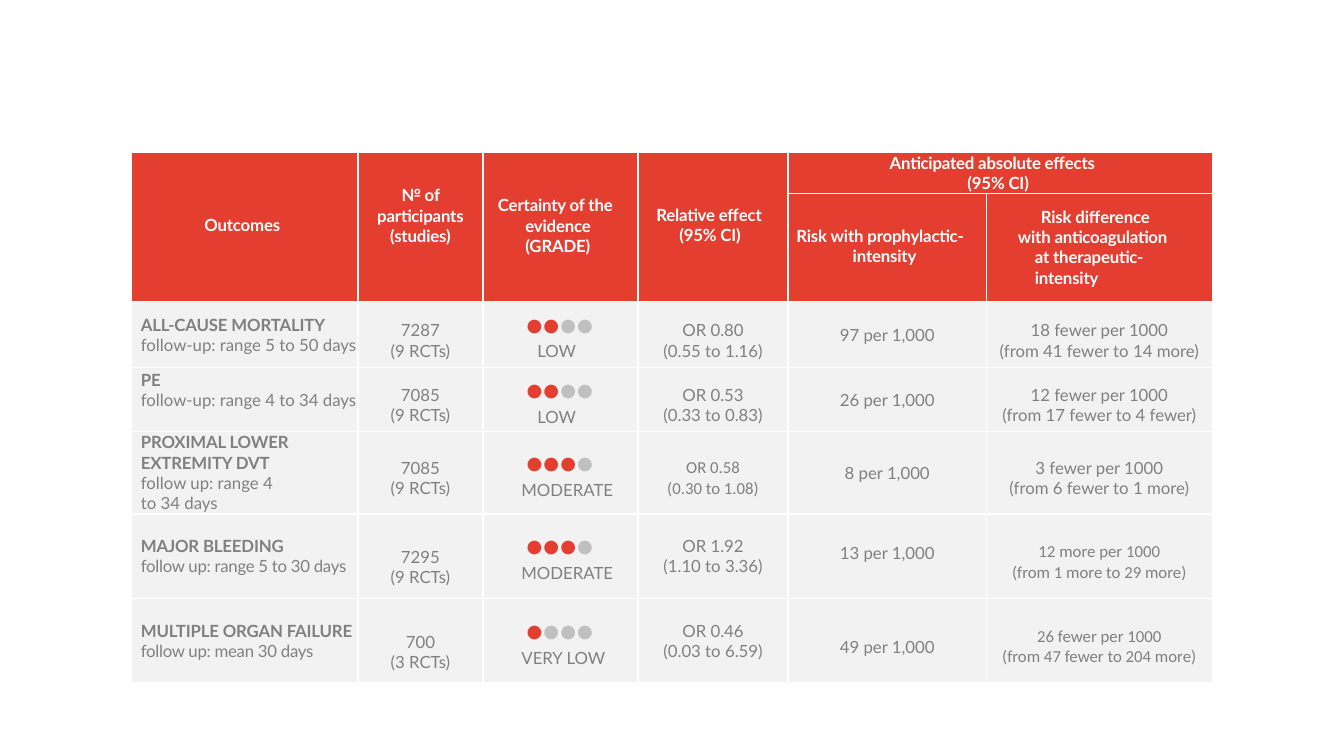
from lxml import etree
from pptx import Presentation
from pptx.dml.color import RGBColor
from pptx.enum import text as t
from pptx.oxml import ns
from pptx.util import Cm, Pt

RED = RGBColor(0xE4, 0x3E, 0x31)
PALE = RGBColor(0xF2, 0xF2, 0xF2)
GREY = RGBColor(0x80, 0x80, 0x80)
DIM = RGBColor(0xC0, 0xC0, 0xC0)
WHITE = RGBColor(0xFF, 0xFF, 0xFF)
MID, LEFT = t.PP_ALIGN.CENTER, t.PP_ALIGN.LEFT

# Lengths are in cm
COLS = (5.72, 3.15, 3.91, 3.78, 5, 5.69)
ROWS = (1.04, 2.72, 1.68, 1.6, 2.08, 2.13, 2.13)
MERGED = [((0, c), (1, c)) for c in range(4)] + [((0, 4), (0, 5))]

# Row, column, bottom margin, lines of (text, left, first-line and right indent)
HEADS = [
    (0, 0, 0.1, [("Outcomes", 1.85, 0, 0)]),
    (0, 1, 0.56, [("№ of participants (studies)", 0.38, 0, 0.38)]),
    (0, 2, 0.05, [("Certainty of the evidence (GRADE)", 1.07, -0.69, 0)]),
    (0, 3, 0.1, [("Relative effect (95% CI)", 1.04, -0.58, 0)]),
    (0, 4, 0, [("Anticipated absolute effects (95% CI)", 4.52, -1.96, 2.16)]),
    (1, 4, 0.05, [("Risk with prophylactic-intensity", 1.63, -1.42, 0)]),
    (1, 5, 0, [("Risk difference with anticoagulation", 0.79, 0.58, 0.86),
               ("at therapeutic-intensity", 1.22, 0, 0.86)]),
]

# Outcome, follow-up, participants, filled dots, grade, effect, risk, difference
BODY = [
    ("ALL-CAUSE MORTALITY", "follow-up: range 5 to 50 days", ("7287", "(9 RCTs)"),
     2, "LOW", ("OR 0.80", "(0.55 to 1.16)"), "97 per 1,000",
     ("18 fewer per 1000", "(from 41 fewer to 14 more)")),
    ("PE", "follow-up: range 4 to 34 days", ("7085", "(9 RCTs)"),
     2, "LOW", ("OR 0.53", "(0.33 to 0.83)"), "26 per 1,000",
     ("12 fewer per 1000", "(from 17 fewer to 4 fewer)")),
    ("PROXIMAL LOWER EXTREMITY DVT", "follow up: range 4 to 34 days",
     ("7085", "(9 RCTs)"), 3, "MODERATE", ("OR 0.58", "(0.30 to 1.08)"),
     "8 per 1,000", ("3 fewer per 1000", "(from 6 fewer to 1 more)")),
    ("MAJOR BLEEDING", "follow up: range 5 to 30 days", ("7295", "(9 RCTs)"),
     3, "MODERATE", ("OR 1.92", "(1.10 to 3.36)"), "13 per 1,000",
     ("12 more per 1000", "(from 1 more to 29 more)")),
    ("MULTIPLE ORGAN FAILURE", "follow up: mean 30 days", ("700", "(3 RCTs)"),
     1, "VERY LOW", ("OR 0.46", "(0.03 to 6.59)"), "49 per 1,000",
     ("26 fewer per 1000", "(from 47 fewer to 204 more)")),
]
# Top margins of each body row; a negative one is a bottom margin
DROPS = [(0, 0.3, 0, 0.3, 0.03, 0.3), (-0.5, 0.28, 0, 0.28, 0, 0.28),
         (0, 0.28, 0, 0.28, 0, 0.28), (0, 0.56, 0, 0, -0.15, 0.3),
         (0, 0.56, 0, 0, 0.3, 0.3)]
SLIM = {(2, 3), (3, 5), (4, 5)}  # body cells set in Calibri


def style(cell, fill, drop=0):
    cell.margin_left = cell.margin_right = 0
    cell.margin_top, cell.margin_bottom = Cm(max(drop, 0)), Cm(max(-drop, 0))
    cell.vertical_anchor = t.MSO_ANCHOR.MIDDLE
    props = cell._tc.get_or_add_tcPr()
    for side in ("lnL", "lnR", "lnT", "lnB"):
        line = etree.SubElement(props, ns.qn("a:" + side), w=str(Pt(1)))
        solid = etree.SubElement(line, ns.qn("a:solidFill"))
        etree.SubElement(solid, ns.qn("a:srgbClr"), val=str(WHITE))
    cell.fill.solid()
    cell.fill.fore_color.rgb = fill


def write(cell, *parts, align=MID, left=0, first=0, right=0, size=12,
          bold=False, font="Lato", track=0):
    """Add one paragraph made of (text, colour) parts."""
    frame = cell.text_frame
    para = frame.paragraphs[0]
    if para.runs:
        para = frame.add_paragraph()
    para.alignment = align
    props = para._p.get_or_add_pPr()
    for name, val in (("marL", left), ("indent", first), ("marR", right)):
        props.set(name, str(Cm(val)))
    for words, color in parts:
        run = para.add_run()
        run.text = words
        run.font.size, run.font.bold, run.font.name = Pt(size), bold, font
        run.font.color.rgb = color
        run._r.get_or_add_rPr().set("spc", str(track))


deck = Presentation()
deck.slide_width, deck.slide_height = Cm(33.87), Cm(19.05)
slide = deck.slides.add_slide(deck.slide_layouts[6])
grid = slide.shapes.add_table(len(ROWS), len(COLS), Cm(3.3), Cm(3.83),
                              Cm(sum(COLS)), Cm(sum(ROWS))).table
grid.first_row = grid.horz_banding = False
for col, width in zip(grid.columns, COLS):
    col.width = Cm(width)
for row, height in zip(grid.rows, ROWS):
    row.height = Cm(height)

bottoms = {(r, c): -low for r, c, low, _ in HEADS}
for r in range(len(ROWS)):
    for c in range(len(COLS)):
        if r < 2:
            style(grid.cell(r, c), RED, bottoms.get((r, c), 0))
        else:
            style(grid.cell(r, c), PALE, DROPS[r - 2][c])
for start, end in MERGED:
    grid.cell(*start).merge(grid.cell(*end))

for r, c, _, lines in HEADS:
    for words, left, first, right in lines:
        write(grid.cell(r, c), (words, WHITE), align=LEFT if c or r else LEFT
              if c != 1 else MID, left=left, first=first, right=right,
              bold=True, track=-10) if c != 1 else write(
            grid.cell(r, c), (words, WHITE), left=left, right=right,
            bold=True, track=-10)

for i, (name, follow, count, dots, grade, effect, risk, diff) in enumerate(BODY):
    cells = [grid.cell(i + 2, c) for c in range(len(COLS))]
    write(cells[0], (name, GREY), align=LEFT, left=0.25, bold=True, track=-10)
    write(cells[0], (follow, GREY), align=LEFT, left=0.25,
          right=1.9 if i == 2 else 0, track=-20 if i > 2 else 0)
    write(cells[2], ("●" * dots, RED), ("●" * (4 - dots), DIM),
          align=LEFT, left=1.09, size=20)
    write(cells[2], (grade, GREY), align=LEFT,
          left=1.37 if grade == "LOW" else 0.97)
    for c, lines in ((1, count), (3, effect), (4, (risk,)), (5, diff)):
        for words in lines:
            write(cells[c], (words, GREY),
                  font="Calibri" if (i, c) in SLIM else "Lato")

deck.save("out.pptx")
